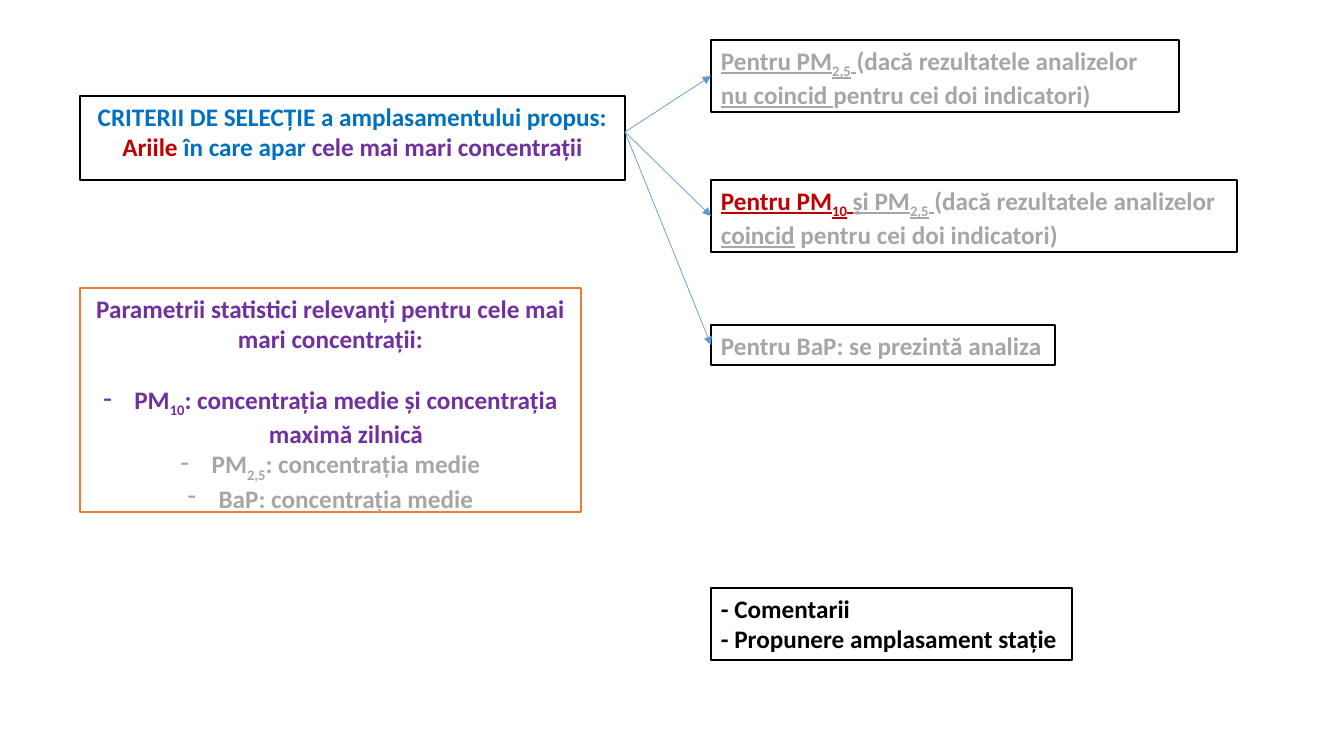
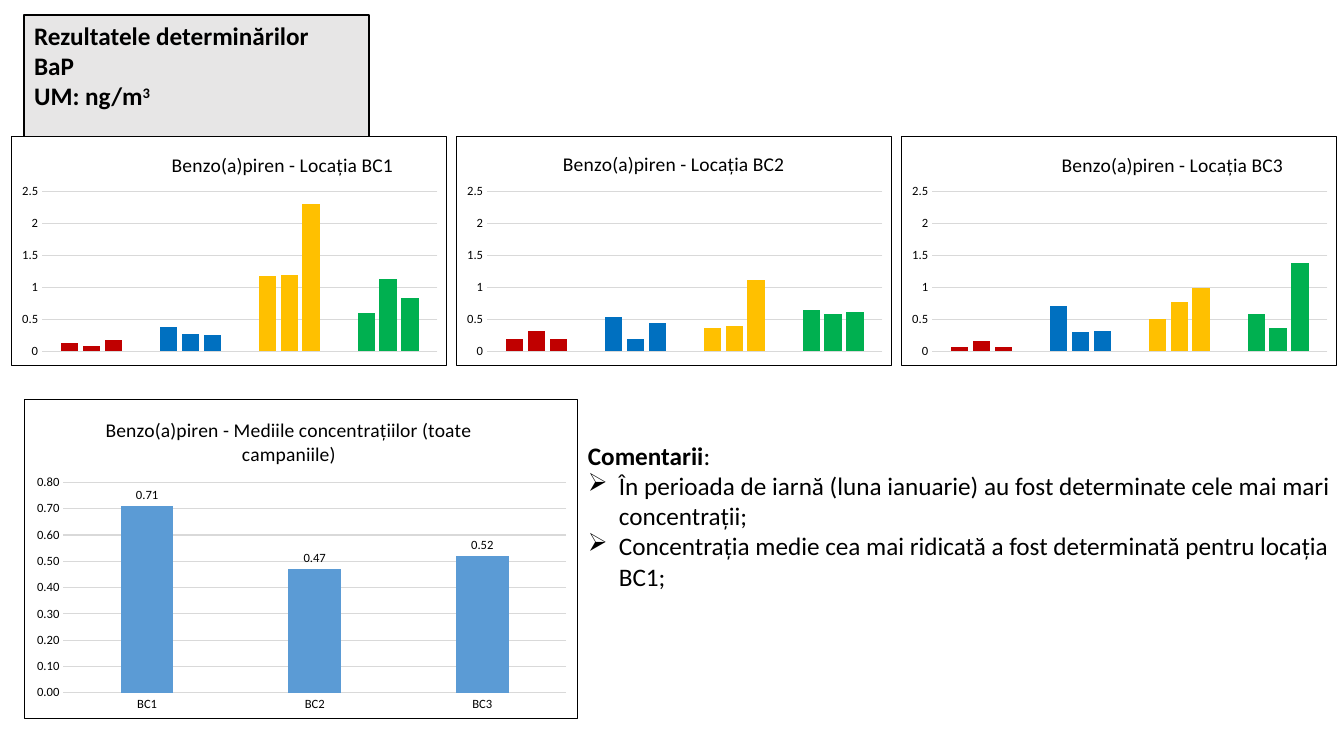
import lxml.etree
import pptx
import pptx.chart.data
import pptx.dml.color
import pptx.enum.chart
import pptx.enum.shapes
import pptx.enum.text
import pptx.oxml
import pptx.oxml.ns
import pptx.util

PX = 914400 / 100.8
FONT = "Calibri"
C = {"black": "000000", "white": "FFFFFF", "pale": "E7E6E6", "grey": "A6A6A6", "grid": "D9D9D9",
     "red": "C00000", "blue": "0070C0", "purple": "7030A0", "orange": "ED7D31",
     "yellow": "FFC000", "green": "00B050", "sky": "5B9BD5"}
BASELINE = {"-": "-25000", "+": "30000"}
INDENT = 31

CRITERIA = {"at": (80, 96, 545, 72), "align": "CENTER", "paras": [
    {"runs": [("CRITERII DE SELECȚIE a amplasamentului propus:", "blue", "b")]},
    {"runs": [("Ariile", "red", "b"), (" în care apar ", "blue", "b"),
              ("cele mai mari concentrații", "purple", "b")]}]}
PARAMETERS = {"at": (80, 288, 501, 224), "line": "orange", "align": "CENTER", "paras": [
    {"after": 22, "runs": [("Parametrii statistici relevanți pentru cele mai mari concentrații:", "purple", "b")]},
    {"bullet": "-", "runs": [("PM", "purple", "b"), ("10", "purple", "b-"),
                             (": concentrația medie și concentrația maximă zilnică", "purple", "b")]},
    {"bullet": "-", "runs": [("PM", "grey", "b"), ("2,5", "grey", "b-"), (": concentrația medie", "grey", "b")]},
    {"bullet": "-", "runs": [("BaP: concentrația medie", "grey", "b")]}]}
PROPOSAL = {"at": (711, 588, 361, 72), "paras": [
    {"runs": [("- Comentarii", "black", "b")]},
    {"runs": [("- Propunere amplasament stație", "black", "b")]}]}
CASES = [
    {"at": (711, 40, 468, 72), "paras": [{"runs": [
        ("Pentru PM", "grey", "bu"), ("2,5", "grey", "bu-"), (" ", "grey", "bu"),
        ("(dacă rezultatele analizelor ", "grey", "b"), ("nu coincid ", "grey", "bu"),
        ("pentru cei doi indicatori)", "grey", "b")]}]},
    {"at": (711, 180, 526, 72), "paras": [{"runs": [
        ("Pentru PM", "red", "bu"), ("10", "red", "bu-"), (" ", "red", "bu"),
        ("și PM", "grey", "bu"), ("2,5", "grey", "bu-"), (" ", "grey", "bu"),
        ("(dacă rezultatele analizelor ", "grey", "b"), ("coincid", "grey", "bu"),
        (" pentru cei doi indicatori)", "grey", "b")]}]},
    {"at": (711, 325, 344, 40), "paras": [{"runs": [("Pentru BaP: se prezintă analiza", "grey", "b")]}]}]

RESULTS = {"at": (24, 15, 345, 102), "fill": "pale", "paras": [
    {"runs": [("Rezultatele determinărilor", "black", "b")]},
    {"runs": [("BaP", "black", "b")]},
    {"runs": [("UM: ng/m", "black", "b"), ("3", "black", "b+")]}]}
COMMENTS = {"at": (578, 435, 766, 163), "fill": None, "line": None, "paras": [
    {"runs": [("Comentarii", "black", "b"), (":", "black", "")]},
    {"bullet": "➢", "runs": [
        ("În perioada de iarnă (luna ianuarie) au fost determinate cele mai mari concentrații;", "black", "")]},
    {"bullet": "➢", "runs": [
        ("Concentrația medie cea mai ridicată a fost determinată pentru locația BC1;", "black", "")]}]}

CAMPAIGN_COLOURS = ["red", "blue", "yellow", "green"]
LOCATIONS = [
    ("BC1", (0.36, 0.05), [(0.13, 0.38, 1.18, 0.6), (0.09, 0.27, 1.2, 1.13), (0.18, 0.26, 2.3, 0.83)]),
    ("BC2", None, [(0.2, 0.54, 0.36, 0.64), (0.32, 0.2, 0.39, 0.58), (0.2, 0.45, 1.12, 0.61)]),
    ("BC3", (0.36, 0.05), [(0.07, 0.71, 0.5, 0.58), (0.16, 0.3, 0.78, 0.36), (0.07, 0.32, 0.99, 1.38)])]
LOCATION_AT, LOCATION_STEP = (11, 136, 436, 230), 445
MEANS = {"at": (24, 399, 554, 320), "title": "Benzo(a)piren - Mediile concentrațiilor (toate campaniile)",
         "title_at": (0.14, 0.04), "plot_at": (0.07, 0.26, 0.91, 0.66), "cats": ["BC1", "BC2", "BC3"],
         "series": [(0.71, 0.47, 0.52)], "top": 0.8, "step": 0.1, "format": "0.00"}


def px(*lengths):
    return [round(n * PX) for n in lengths]


def rgb(name):
    return pptx.dml.color.RGBColor.from_string(C[name])


def set_all(obj, **values):
    for name, value in values.items():
        setattr(obj, name, value)


def set_line(line, colour, width):
    line.color.rgb = rgb(colour)
    line.width = pptx.util.Pt(width)


def set_font(font, size, colour="black", **values):
    set_all(font, name=FONT, size=pptx.util.Pt(size), **values)
    font.color.rgb = rgb(colour)


def write_paragraph(p, para, align):
    p.alignment = getattr(pptx.enum.text.PP_ALIGN, align)
    if "after" in para:
        p.space_after = pptx.util.Pt(para["after"])
    if "bullet" in para:
        pPr = p._p.get_or_add_pPr()
        indent = px(INDENT)[0]
        pPr.set("marL", str(indent))
        pPr.set("indent", str(-indent))
        lxml.etree.SubElement(pPr, pptx.oxml.ns.qn("a:buChar")).set("char", para["bullet"])
    for text, colour, marks in para["runs"]:
        r = p.add_run()
        r.text = text
        set_font(r.font, 18, colour, bold="b" in marks, underline="u" in marks)
        for mark, offset in BASELINE.items():
            if mark in marks:
                r._r.get_or_add_rPr().set("baseline", offset)


def fill_box(sp, box):
    set_all(sp, **dict(zip(("left", "top", "width", "height"), px(*box["at"]))))
    fill, line = box.get("fill", "white"), box.get("line", "black")
    if fill:
        sp.fill.solid()
        sp.fill.fore_color.rgb = rgb(fill)
    if line:
        set_line(sp.line, line, 1)
    tf = sp.text_frame
    set_all(tf, word_wrap=True, vertical_anchor=pptx.enum.text.MSO_ANCHOR.TOP,
            auto_size=pptx.enum.text.MSO_AUTO_SIZE.SHAPE_TO_FIT_TEXT)
    for i, para in enumerate(box["paras"]):
        write_paragraph(tf.add_paragraph() if i else tf.paragraphs[0], para, box.get("align", "LEFT"))
    return sp


def add_box(s, box):
    return fill_box(s.shapes.add_textbox(*px(*box["at"])), box)


def add_titled_slide(prs, box):
    s = prs.slides.add_slide(prs.slide_layouts[5])
    fill_box(s.shapes.title, box)
    return s


def add_arrow(s, start, end):
    cx = s.shapes.add_connector(pptx.enum.shapes.MSO_CONNECTOR.STRAIGHT, 0, 0, 0, 0)
    cx.begin_connect(start, 3)
    cx.end_connect(end, 1)
    set_line(cx.line, "sky", 0.5)
    lxml.etree.SubElement(cx.line._get_or_add_ln(), pptx.oxml.ns.qn("a:tailEnd")).set("type", "triangle")
    lxml.etree.SubElement(cx._element.spPr, pptx.oxml.ns.qn("a:effectLst"))


def set_layout(parent, index, place, inner=False):
    for old in parent.findall(pptx.oxml.ns.qn("c:layout")):
        parent.remove(old)
    layout = lxml.etree.Element(pptx.oxml.ns.qn("c:layout"))
    manual = lxml.etree.SubElement(layout, pptx.oxml.ns.qn("c:manualLayout"))
    values = [("layoutTarget", "inner")] if inner else []
    values += [("xMode", "edge"), ("yMode", "edge")] + list(zip("xywh", place))
    for tag, value in values:
        lxml.etree.SubElement(manual, pptx.oxml.ns.qn("c:" + tag)).set("val", str(value))
    parent.insert(index, layout)


def set_frame(chart):
    chart._chartSpace.chart.addnext(pptx.oxml.parse_xml(
        f'<c:spPr {pptx.oxml.ns.nsdecls("c", "a")}>'
        f'<a:solidFill><a:srgbClr val="{C["white"]}"/></a:solidFill>'
        f'<a:ln w="12700"><a:solidFill><a:srgbClr val="{C["black"]}"/></a:solidFill></a:ln></c:spPr>'))


def add_columns(s, at, title, title_at, plot_at, cats, series, top, step, format, colours=None):
    data = pptx.chart.data.CategoryChartData()
    data.categories = cats
    for i, values in enumerate(series, 1):
        data.add_series(f"Series {i}", values)
    chart = s.shapes.add_chart(pptx.enum.chart.XL_CHART_TYPE.COLUMN_CLUSTERED, *px(*at), data).chart
    set_font(chart.font, 10)
    chart.has_legend = False
    set_frame(chart)

    p = chart.chart_title.text_frame.paragraphs[0]
    r = p.add_run()
    r.text = title
    set_font(r.font, 14, bold=False)
    if title_at:
        set_layout(chart.chart_title._element, 1, title_at)
    set_layout(chart._chartSpace.chart.plotArea, 0, plot_at, inner=True)

    none = pptx.enum.chart.XL_TICK_MARK.NONE
    for axis in (chart.category_axis, chart.value_axis):
        set_all(axis, major_tick_mark=none, minor_tick_mark=none)
        set_font(axis.tick_labels.font, 9)
    set_line(chart.category_axis.format.line, "grid", 0.75)
    chart.category_axis.visible = not colours
    val = chart.value_axis
    set_all(val, minimum_scale=0, maximum_scale=top, major_unit=step, has_major_gridlines=True)
    set_all(val.tick_labels, number_format=format, number_format_is_linked=False)
    val.format.line.fill.background()
    set_line(val.major_gridlines.format.line, "grid", 0.75)

    plot = chart.plots[0]
    set_all(plot, gap_width=219, overlap=-27, vary_by_categories=False)
    for ser in plot.series:
        parts = [(ser.points[i], c) for i, c in enumerate(colours)] if colours else [(ser, "sky")]
        for part, colour in parts:
            part.format.fill.solid()
            part.format.fill.fore_color.rgb = rgb(colour)
    if not colours:
        plot.has_data_labels = True
        labels = plot.data_labels
        set_all(labels, show_value=True, number_format=format, number_format_is_linked=False,
                position=pptx.enum.chart.XL_LABEL_POSITION.OUTSIDE_END)
        set_font(labels.font, 9)


def build_criteria(prs):
    s = add_titled_slide(prs, CRITERIA)
    add_box(s, PARAMETERS)
    add_box(s, PROPOSAL)
    for case in [add_box(s, box) for box in CASES]:
        add_arrow(s, s.shapes.title, case)


def build_results(prs):
    s = add_titled_slide(prs, RESULTS)
    add_box(s, COMMENTS)
    left, *rest = LOCATION_AT
    for i, (name, title_at, series) in enumerate(LOCATIONS):
        add_columns(s, at=(left + i * LOCATION_STEP, *rest), title=f"Benzo(a)piren - Locația {name}",
                    title_at=title_at, plot_at=(0.07, 0.24, 0.91, 0.7), cats=["1", "2", "3", "4"],
                    series=series, top=2.5, step=0.5, format="General", colours=CAMPAIGN_COLOURS)
    add_columns(s, **MEANS)


def main():
    prs = pptx.Presentation()
    prs.slide_width, prs.slide_height = px(1344, 756)
    build_criteria(prs)
    build_results(prs)
    prs.save("out.pptx")


if __name__ == "__main__":
    main()
